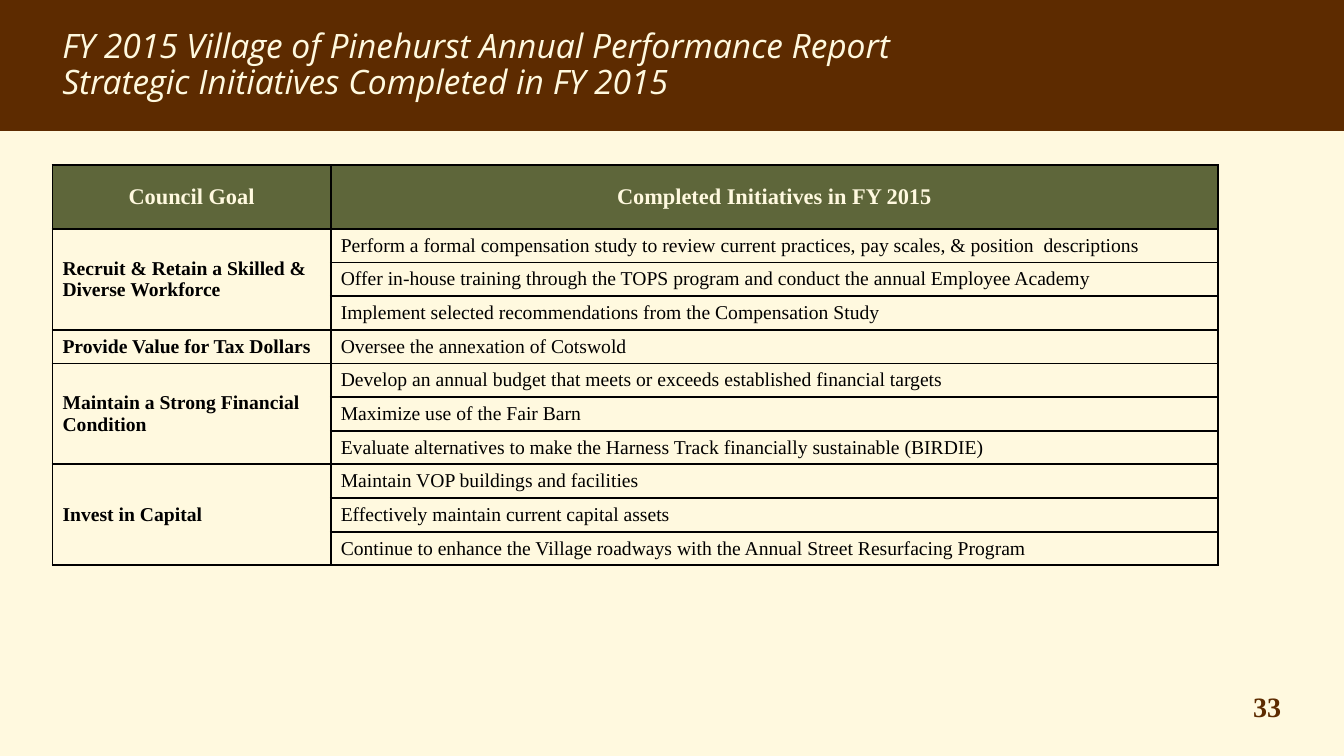
import pptx
import pptx.util
import pptx.dml.color
import pptx.enum.shapes
import pptx.enum.text
import pptx.oxml

Inches = pptx.util.Inches
Anchor = pptx.enum.text.MSO_ANCHOR
Align = pptx.enum.text.PP_ALIGN

theme = {
    "cream": "FFF9DF", "brown": "5D2B00", "olive": "5E663A", "black": "000000",
    "title_font": "Open Sans", "body_font": "Times New Roman",
    "title_size": 24, "number_size": 20, "header_size": 16, "body_size": 14,
    "border_width": 1.5,
}

title_lines = [
    "FY 2015 Village of Pinehurst Annual Performance Report",
    "Strategic Initiatives Completed in FY 2015",
]
headers = ["Council Goal", "Completed Initiatives in FY 2015"]
goals = [
    ("Recruit & Retain a Skilled & Diverse Workforce", [
        "Perform a formal compensation study to review current practices, pay scales, & position  descriptions",
        "Offer in-house training through the TOPS program and conduct the annual Employee Academy",
        "Implement selected recommendations from the Compensation Study",
    ]),
    ("Provide Value for Tax Dollars", ["Oversee the annexation of Cotswold"]),
    ("Maintain a Strong Financial Condition", [
        "Develop an annual budget that meets or exceeds established financial targets",
        "Maximize use of the Fair Barn",
        "Evaluate alternatives to make the Harness Track financially sustainable (BIRDIE)",
    ]),
    ("Invest in Capital", [
        "Maintain VOP buildings and facilities",
        "Effectively maintain current capital assets",
        "Continue to enhance the Village roadways with the Annual Street Resurfacing Program",
    ]),
]


def write(text_frame, text, font, size, color, bold=False, italic=False, align=Align.LEFT):
    text_frame.word_wrap = True
    text_frame.text = text
    for paragraph in text_frame.paragraphs:
        paragraph.alignment = align
        for run in paragraph.runs:
            run.font.name = theme[font]
            run.font.size = pptx.util.Pt(theme[size])
            run.font.color.rgb = pptx.dml.color.RGBColor.from_string(theme[color])
            run.font.bold = bold
            run.font.italic = italic


def style_cell(cell, fill):
    cell.vertical_anchor = Anchor.MIDDLE
    properties = cell._tc.get_or_add_tcPr()
    width = pptx.util.Pt(theme["border_width"])
    for side in ("lnL", "lnR", "lnT", "lnB"):
        properties.append(pptx.oxml.parse_xml(
            f'<a:{side} xmlns:a="http://schemas.openxmlformats.org/drawingml/2006/main" w="{width}">'
            f'<a:solidFill><a:srgbClr val="{theme["black"]}"/></a:solidFill></a:{side}>'))
    cell.fill.solid()
    cell.fill.fore_color.rgb = pptx.dml.color.RGBColor.from_string(theme[fill])


presentation = pptx.Presentation()
presentation.slide_width = Inches(13.33)
presentation.slide_height = Inches(7.5)
slide = presentation.slides.add_slide(presentation.slide_layouts[6])
slide.background.fill.solid()
slide.background.fill.fore_color.rgb = pptx.dml.color.RGBColor.from_string(theme["cream"])

left_margin = Inches(0.52)

banner = slide.shapes.add_shape(
    pptx.enum.shapes.MSO_SHAPE.RECTANGLE, 0, 0, presentation.slide_width, Inches(1.3))
banner.shadow.inherit = False
banner.fill.solid()
banner.fill.fore_color.rgb = pptx.dml.color.RGBColor.from_string(theme["brown"])
banner.line.fill.background()

page_number = slide.shapes.add_textbox(Inches(12.33), Inches(6.79), Inches(0.69), Inches(0.44))
write(page_number.text_frame, "33", "body_font", "number_size", "brown", bold=True)

title = slide.shapes.add_textbox(left_margin, Inches(0.25), Inches(12.29), Inches(0.91))
write(title.text_frame, "\n".join(title_lines), "title_font", "title_size", "cream", italic=True)
for paragraph in title.text_frame.paragraphs:
    paragraph.line_spacing = 0.88

column_widths = [Inches(2.76), Inches(8.8)]
row_heights = [Inches(0.63)] + [Inches(0.33)] * sum(len(items) for goal, items in goals)
table = slide.shapes.add_table(
    len(row_heights), len(column_widths), left_margin, Inches(1.64),
    sum(column_widths), sum(row_heights)).table
for column, width in zip(table.columns, column_widths):
    column.width = width
for row, height in zip(table.rows, row_heights):
    row.height = height
for cell in table.iter_cells():
    style_cell(cell, "cream")

for index, header in enumerate(headers):
    cell = table.cell(0, index)
    cell.fill.fore_color.rgb = pptx.dml.color.RGBColor.from_string(theme["olive"])
    write(cell.text_frame, header, "body_font", "header_size", "cream", bold=True, align=Align.CENTER)

first_row = 1
for goal, initiatives in goals:
    goal_cell = table.cell(first_row, 0)
    if len(initiatives) > 1:
        goal_cell.merge(table.cell(first_row + len(initiatives) - 1, 0))
    write(goal_cell.text_frame, goal, "body_font", "body_size", "black", bold=True)
    for offset, initiative in enumerate(initiatives):
        cell = table.cell(first_row + offset, 1)
        write(cell.text_frame, initiative, "body_font", "body_size", "black")
    first_row += len(initiatives)

presentation.save("out.pptx")
